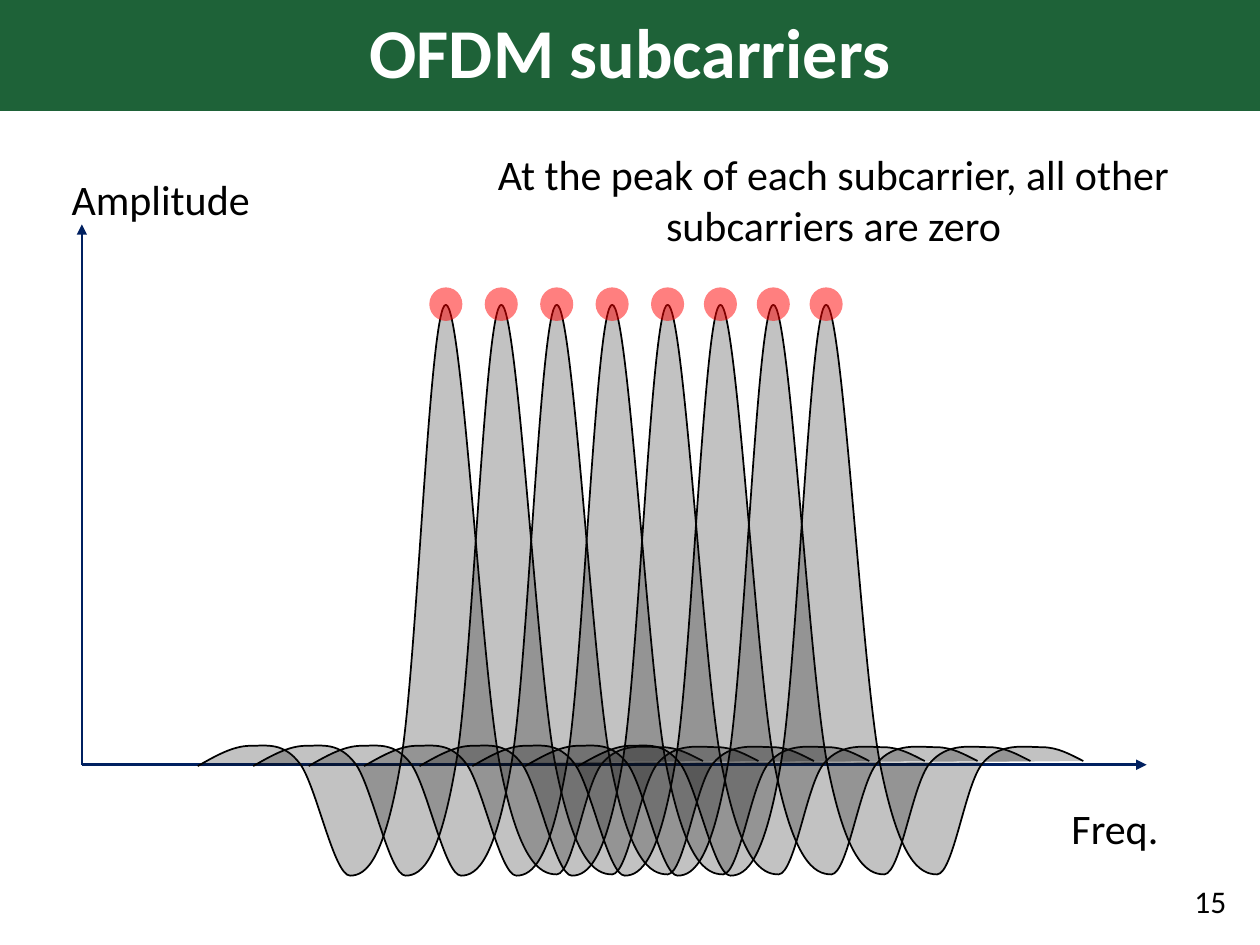
from dataclasses import dataclass
from itertools import accumulate

from lxml.etree import SubElement
from pptx import Presentation
from pptx.dml.color import RGBColor
from pptx.enum.shapes import MSO_CONNECTOR as Connector, MSO_SHAPE as Preset
from pptx.enum.text import MSO_ANCHOR as Anchor, MSO_AUTO_SIZE as AutoSize, PP_ALIGN as Align
from pptx.oxml.ns import qn
from pptx.util import Pt

COLORS = {
    "banner": "1E6238",
    "banner_text": "FFFFFF",
    "text": "000000",
    "axis": "002060",
    "wave": "0D0D0D",
    "outline": "000000",
    "peak": "FF0000",
}
FONT = "Calibri"

ORIGIN = (46.8, 437)
FIRST_START = 113
CARRIER_STEPS = [31.68] * 4 + [30.2] * 3
PEAK_OFFSET = 132.3
PEAK_TOP, PEAK_WIDTH, PEAK_HEIGHT = 164.2, 18.9, 19.2

WAVE_START = (0, 437.8)
WAVE_CURVES = [
    [(10.1, 432), (20.2, 426.2), (30.2, 426.2)],
    [(39.6, 426.2), (49, 424.1), (58.3, 436.3)],
    [(67.7, 448.6), (77.8, 500.4), (87.1, 500.4)],
    [(96.5, 500.4), (106.6, 491), (115.9, 436.3)],
    [(125.3, 381.6), (132.5, 173.5), (141.8, 174.2)],
    [(151.2, 174.2), (162, 383), (172.8, 437.8)],
    [(183.6, 491.8), (195.1, 499.7), (205.2, 499.7)],
    [(214.6, 499), (221, 448.6), (231.1, 436.3)],
    [(241.2, 424.1), (254.9, 427), (265, 427)],
    [(274.3, 427), (281.5, 431.3), (288.7, 434.9)],
]


@dataclass
class Label:
    text: str
    left: float
    top: float
    width: float
    height: float
    size: float = 24
    align: Align = Align.CENTER
    anchor: Anchor = Anchor.TOP


@dataclass
class Axis:
    end: tuple[float, float]
    weight: float


PAGE_NUMBER = Label("15", 545.8, 500.4, 162, 28.8, 18, Align.RIGHT, Anchor.MIDDLE)
AXIS_LABELS = [
    Label("Freq.", 566.6, 455, 141.1, 45.4),
    Label("Amplitude", 33.8, 95.8, 186.5, 36, align=Align.LEFT),
    Label("At the peak of each subcarrier, all other subcarriers are zero",
          275.8, 81.4, 401, 118.1),
]
FREQUENCY = Axis((655.2, 437), 2)
AMPLITUDE = Axis((46.8, 128.2), 1.5)


def rgb(part: str) -> RGBColor:
    return RGBColor.from_string(COLORS[part])


def apply(target, values: dict) -> None:
    for attribute, value in values.items():
        setattr(target, attribute, value)


def format_text(frame, text: str, size: float, color: str, align: Align,
                anchor: Anchor, bold: bool = False) -> None:
    apply(frame, {"text": text, "word_wrap": True, "vertical_anchor": anchor})
    paragraph = frame.paragraphs[0]
    paragraph.alignment = align
    font = paragraph.runs[0].font
    apply(font, {"name": FONT, "size": Pt(size), "bold": bold})
    font.color.rgb = rgb(color)


def add_title(slide, text: str) -> None:
    title = slide.shapes.title
    apply(title, {"left": Pt(0), "top": Pt(0), "width": Pt(720), "height": Pt(63.4)})
    title.fill.solid()
    title.fill.fore_color.rgb = rgb("banner")
    format_text(title.text_frame, text, 40, "banner_text", Align.CENTER, Anchor.MIDDLE, True)
    title.text_frame.auto_size = AutoSize.NONE
    title.text_frame.paragraphs[0].line_spacing = 0.9


def add_label(slide, label: Label) -> None:
    box = slide.shapes.add_textbox(
        Pt(label.left), Pt(label.top), Pt(label.width), Pt(label.height))
    format_text(box.text_frame, label.text, label.size, "text", label.align, label.anchor)


def add_axis(slide, axis: Axis) -> None:
    arrow = slide.shapes.add_connector(
        Connector.STRAIGHT, *map(Pt, ORIGIN), *map(Pt, axis.end))
    arrow.line.color.rgb = rgb("axis")
    arrow.line.width = Pt(axis.weight)
    SubElement(arrow.line._get_or_add_ln(), qn("a:tailEnd"), type="triangle")
    SubElement(arrow._element.spPr, qn("a:effectLst"))


def fill_translucent(shape, color: str, percent: int) -> None:
    shape.shadow.inherit = False
    shape.fill.solid()
    shape.fill.fore_color.rgb = rgb(color)
    tint = shape._element.spPr.find(qn("a:solidFill"))[0]
    SubElement(tint, qn("a:alpha"), val=str(percent * 1000))


def bend(shape) -> None:
    path_element = next(shape._element.iter(qn("a:path")))
    corners = path_element.findall(qn("a:lnTo"))
    for first in range(0, len(corners), 3):
        curve = SubElement(path_element, qn("a:cubicBezTo"))
        for corner in corners[first:first + 3]:
            curve.append(corner[0])
            path_element.remove(corner)


def add_wave(slide, start: float) -> None:
    builder = slide.shapes.build_freeform(Pt(start + WAVE_START[0]), Pt(WAVE_START[1]))
    builder.add_line_segments(
        [(Pt(start + x), Pt(y)) for curve in WAVE_CURVES for x, y in curve], close=False)
    wave = builder.convert_to_shape()
    bend(wave)
    fill_translucent(wave, "wave", 25)
    wave.line.color.rgb = rgb("outline")
    wave.line.width = Pt(1)


def add_peak(slide, start: float) -> None:
    peak = slide.shapes.add_shape(
        Preset.OVAL, Pt(start + PEAK_OFFSET), Pt(PEAK_TOP), Pt(PEAK_WIDTH), Pt(PEAK_HEIGHT))
    fill_translucent(peak, "peak", 50)
    peak.line.fill.background()


def main() -> None:
    deck = Presentation()
    apply(deck, {"slide_width": Pt(720), "slide_height": Pt(540)})
    slide = deck.slides.add_slide(deck.slide_layouts.get_by_name("Title Only"))
    starts = list(accumulate(CARRIER_STEPS, initial=FIRST_START))

    add_title(slide, "OFDM subcarriers")
    add_label(slide, PAGE_NUMBER)
    add_axis(slide, FREQUENCY)
    for draw in (add_wave, add_peak):
        for start in starts:
            draw(slide, start)
    add_axis(slide, AMPLITUDE)
    for label in AXIS_LABELS:
        add_label(slide, label)
    deck.save("out.pptx")


if __name__ == "__main__":
    main()
